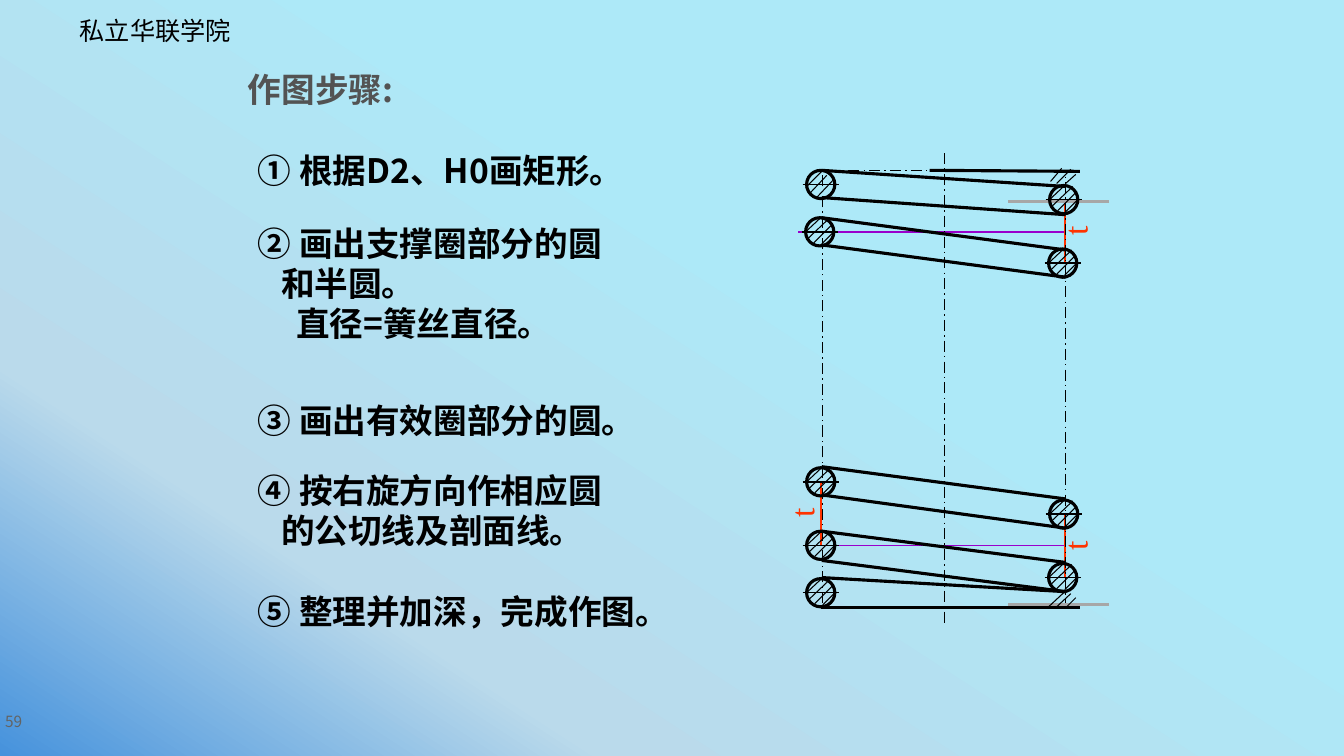
from copy import deepcopy
from math import cos, radians, sin

from pptx import Presentation
from pptx.dml.color import RGBColor
from pptx.enum.dml import MSO_LINE
from pptx.enum.shapes import MSO_CONNECTOR, MSO_SHAPE
from pptx.enum.text import MSO_ANCHOR, PP_ALIGN
from pptx.oxml.ns import qn
from pptx.util import Inches, Pt

color = RGBColor.from_string
BLACK, RED, PURPLE, GREY = "000000", "FF3300", "9900CC", "A7A7A7"
HEAVY, MEDIUM, LIGHT = 2.25, 1, 0.75
SANS = "Noto Sans CJK SC"

deck = Presentation()
deck.slide_width, deck.slide_height = Inches(13.33), Inches(7.5)
page = deck.slides.add_slide(deck.slide_layouts[6])
shapes = page.shapes


def add_text(place, lines, size, font, hex_color, bold=False, inset=0.1):
    """Each line is its text and its left indent in inches."""
    box = shapes.add_textbox(*(Inches(length) for length in place))
    frame = box.text_frame
    frame.word_wrap = True
    frame.margin_left = frame.margin_right = Inches(inset)
    for number, (text, indent) in enumerate(lines):
        para = frame.add_paragraph() if number else frame.paragraphs[0]
        para.text = text
        if indent:
            para._p.get_or_add_pPr().set("marL", str(Inches(indent)))
        para.font.size, para.font.name, para.font.bold = Pt(size), font, bold
        para.font.color.rgb = color(hex_color)
        for span in para.runs:
            east_asian = span._r.get_or_add_rPr().makeelement(qn("a:ea"), {"typeface": font})
            span._r.rPr.append(east_asian)
    return box


def add_line(x1, y1, x2, y2, width, hex_color=BLACK):
    line = shapes.add_connector(
        MSO_CONNECTOR.STRAIGHT, Inches(x1), Inches(y1), Inches(x2), Inches(y2))
    line.line.width = Pt(width)
    line.line.color.rgb = color(hex_color)
    properties = line._element.spPr
    properties.append(properties.makeelement(qn("a:effectLst"), {}))
    return line


# Background gradient, rising from the lower left
fill = page.background.fill
fill.gradient()
fill.gradient_angle = 57
stop_list = page._element.find(".//" + qn("a:gsLst"))
stop_list.append(deepcopy(stop_list[0]))
stops = [(0, "4692DC"), (0.24, "BADAEB"), (0.62, "ADE9F8")]
for stop, (position, hex_color) in zip(fill.gradient_stops, stops):
    stop.position = position
    stop.color.rgb = color(hex_color)

# School name, page number and title
add_text((0.74, 0.1, 2.94, 0.4), [("私立华联学院", 0)], 18, "Noto Sans CJK JP", BLACK, inset=0.05)
page_number = add_text((0, 7.01, 0.28, 0.29), [("59", 0)], 11, SANS, "636363", inset=0.05)
page_number.text_frame.word_wrap = False
page_number.text_frame.vertical_anchor = MSO_ANCHOR.MIDDLE
page_number.text_frame.paragraphs[0].alignment = PP_ALIGN.JUSTIFY
title = add_text((2.21, 0.63, 3.88, 0.5), [("作图步骤:", 0.15)], 24, SANS, "535353", bold=True)
title.text_frame.vertical_anchor = MSO_ANCHOR.MIDDLE

# Drawing steps
steps = [
    (1.44, 3.95, 0.5, [("① 根据D2、H0画矩形。", 0)]),
    (2.16, 3.67, 1.31, [("② 画出支撑圈部分的圆", 0), ("和半圆。", 0.23),
                        ("直径=簧丝直径。", 0.38)]),
    (3.92, 4.06, 0.5, [("③ 画出有效圈部分的圆。", 0)]),
    (4.61, 3.67, 0.91, [("④ 按右旋方向作相应圆", 0), ("的公切线及剖面线。", 0.23)]),
    (5.81, 4.39, 0.5, [("⑤ 整理并加深，完成作图。", 0)]),
]
for top, width, height, lines in steps:
    add_text((2.46, top, width, height), lines, 24, SANS, BLACK, bold=True)

# Construction lines at half pitch
add_line(10.55, 2.3, 7.91, 2.3, MEDIUM, PURPLE)
add_line(10.55, 5.41, 7.97, 5.41, MEDIUM, PURPLE)

# Pitch marks
for x, y, label_left in [(10.56, 5.1, 10.51), (8.14, 4.78, 7.8), (10.56, 1.98, 10.51)]:
    add_line(x, y, x, y + 0.63, 1.5, RED)
    label = add_text((label_left, y + 0.06, 0.29, 0.5), [("t", 0)], 24, "Times New Roman", RED)
    label.text_frame.word_wrap = False
    label.rotation = 270

# Axis and D2 by H0 rectangle
axis = add_line(9.37, 1.52, 9.37, 6.2, MEDIUM)
axis.line.dash_style = MSO_LINE.LONG_DASH_DOT
outline = shapes.add_shape(
    MSO_SHAPE.RECTANGLE, Inches(8.16), Inches(1.69), Inches(2.41), Inches(4.33))
outline.line.dash_style = MSO_LINE.LONG_DASH_DOT

# Half sections of the ground end coils, and the broken end of the top coil
curves = [(GREY, [(10.55 + 0.15 * cos(radians(angle)), middle + 0.15 * sin(radians(angle)))
                  for angle in range(first, first + 181, 10)])
          for middle, first in [(1.69, 0), (6.02, 180)]]
curves.append((BLACK, [(9.21, 1.7), (9.24, 1.72), (9.29, 1.76)]))
for hex_color, points in curves:
    builder = shapes.build_freeform(*points[0], scale=Inches(1))
    builder.add_line_segments(points[1:], close=False)
    curve = builder.convert_to_shape()
    curve.shadow.inherit = False
    curve.fill.background()
    curve.line.color.rgb = color(hex_color)
    curve.line.width = Pt(HEAVY)

# Wire sections with centre ticks and hatching
hatch = [(0.02, -0.15, -0.15, 0.01), (0.09, -0.13, -0.12, 0.07),
         (0.13, -0.08, -0.06, 0.11), (0.14, 0, 0.02, 0.12)]
top_hatch = [(0.01, -0.13, -0.15, 0.03), (0.06, -0.09, -0.11, 0.09),
             (0.12, -0.04, -0.05, 0.14)]
sections = [(8.14, 1.83, top_hatch), (8.13, 2.3, hatch), (8.14, 4.78, hatch),
            (8.14, 5.41, hatch), (8.14, 5.88, hatch), (10.55, 1.98, hatch),
            (10.54, 2.61, hatch), (10.55, 5.1, hatch), (10.54, 5.73, hatch)]
rings = []
for x, y, strokes in sections:
    rings.append(shapes.add_shape(
        MSO_SHAPE.OVAL, Inches(x - 0.14), Inches(y - 0.14), Inches(0.28), Inches(0.28)))
    add_line(x - 0.18, y, x + 0.18, y, MEDIUM)
    for x1, y1, x2, y2 in strokes:
        add_line(x + x1, y + y1, x + x2, y + y2, LIGHT)
for shape, width in [(outline, MEDIUM)] + [(ring, HEAVY) for ring in rings]:
    shape.shadow.inherit = False
    shape.fill.background()
    shape.line.color.rgb = color(BLACK)
    shape.line.width = Pt(width)

# Hatching of the half sections
for stroke in [(10.55, 5.88, 10.4, 6.02), (10.62, 5.89, 10.48, 6.02),
               (10.67, 5.93, 10.58, 6.02), (10.53, 1.67, 10.42, 1.8),
               (10.62, 1.68, 10.48, 1.82), (10.67, 1.73, 10.57, 1.82)]:
    add_line(*stroke, LIGHT)

# Ground ends and common tangents
add_line(10.71, 1.7, 9.22, 1.69, HEAVY)
add_line(8.14, 6.03, 10.71, 6.03, HEAVY)
for left_y, right_y in [(1.69, 1.85), (1.96, 2.13), (2.16, 2.48), (2.43, 2.75), (4.63, 4.95),
                        (4.91, 5.24), (5.27, 5.58), (5.56, 5.87), (5.73, 5.87)]:
    add_line(8.15, left_y, 10.57, right_y, HEAVY)

deck.save("out.pptx")
